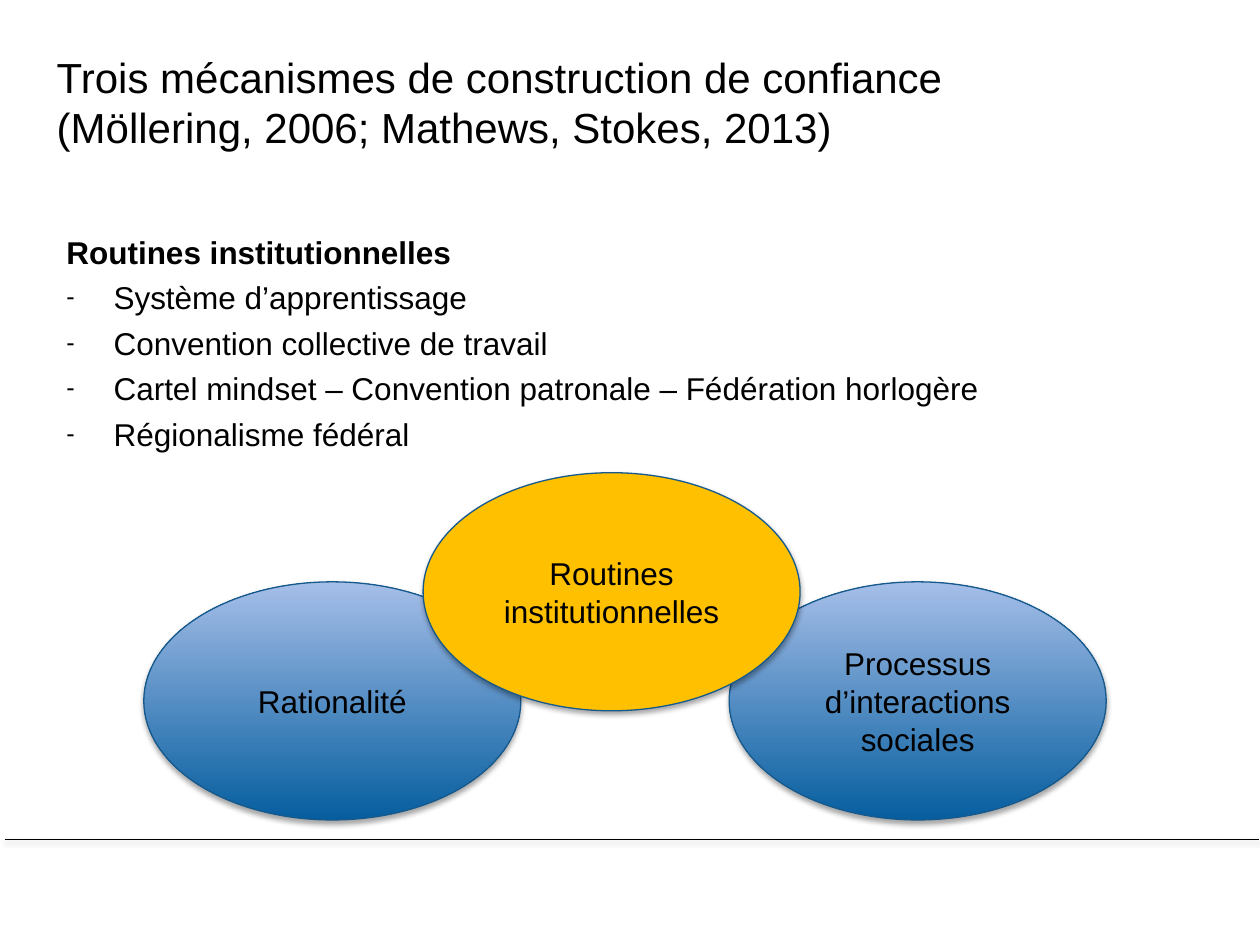
from lxml import etree
from pptx import Presentation
from pptx.dml.color import RGBColor
from pptx.enum.shapes import MSO_CONNECTOR, MSO_SHAPE
from pptx.enum.text import MSO_ANCHOR, PP_ALIGN
from pptx.oxml.ns import qn
from pptx.util import Cm, Pt

OVAL = MSO_SHAPE.OVAL
STRAIGHT = MSO_CONNECTOR.STRAIGHT
TOP, MIDDLE = MSO_ANCHOR.TOP, MSO_ANCHOR.MIDDLE
LEFT, CENTER = PP_ALIGN.LEFT, PP_ALIGN.CENTER

FONT = "Arial"
BLACK = RGBColor(0x00, 0x00, 0x00)
GREY = RGBColor(0x80, 0x80, 0x80)
OUTLINE = RGBColor(0x15, 0x59, 0x8D)
DARK_BLUE = RGBColor(0x06, 0x5E, 0x9F)
LIGHT_BLUE = RGBColor(0xA5, 0xBE, 0xE8)
GOLD = RGBColor(0xFF, 0xC0, 0x00)

# Content
TITLE = ["Trois mécanismes de construction de confiance",
         "(Möllering, 2006; Mathews, Stokes, 2013)"]
HEADING = "Routines institutionnelles"
BULLETS = ["Système d’apprentissage",
           "Convention collective de travail",
           "Cartel mindset – Convention patronale – Fédération horlogère",
           "Régionalisme fédéral"]
# Text, left and top in cm, highlighted; from back to front
MECHANISMS = [("Processus d’interactions sociales", 14.7, 11.73, False),
              ("Rationalité", 2.9, 11.73, False),
              ("Routines institutionnelles", 8.53, 9.53, True)]
OVAL_W, OVAL_H = 7.6, 4.8


def add_text(p, text, size, align=LEFT, bold=False):
    p.alignment = align
    r = p.add_run()
    r.text = text
    r.font.name, r.font.size, r.font.bold = FONT, Pt(size), bold
    r.font.color.rgb = BLACK


def add_shadow(sp, color, opacity, distance):
    spPr = sp._element.spPr
    for old in spPr.findall(qn("a:effectLst")):
        spPr.remove(old)
    effects = etree.SubElement(spPr, qn("a:effectLst"))
    shadow = etree.SubElement(effects, qn("a:outerShdw"), blurRad=str(Pt(3.1)),
                              dist=str(Pt(distance)), dir="5400000", rotWithShape="0")
    clr = etree.SubElement(shadow, qn("a:srgbClr"), val=str(color))
    etree.SubElement(clr, qn("a:alpha"), val=str(opacity * 1000))


def add_dash(p):
    pPr = p._p.get_or_add_pPr()
    pPr.set("marL", str(Cm(0.95)))
    pPr.set("indent", str(-Cm(0.95)))
    etree.SubElement(pPr, qn("a:buSzPct"), val="80000")
    etree.SubElement(pPr, qn("a:buFont"), typeface=FONT)
    etree.SubElement(pPr, qn("a:buChar"), char="-")


prs = Presentation()
prs.slide_width, prs.slide_height = Cm(25.4), Cm(19.05)
s = prs.slides.add_slide(prs.slide_layouts[5])

# Title
title = s.shapes.title
title.left, title.top, title.width, title.height = Cm(0.89), Cm(0.91), Cm(22.86), Cm(2.3)
tf = title.text_frame
tf.vertical_anchor = TOP
for i, line in enumerate(TITLE):
    p = tf.add_paragraph() if i else tf.paragraphs[0]
    p.space_before = Pt(0)
    add_text(p, line, 24)

# Footer rule
rule = s.shapes.add_connector(STRAIGHT, Cm(0.1), Cm(16.92), Cm(25.37), Cm(16.92))
rule.line.color.rgb = BLACK
rule.line.width = Pt(0.25)
add_shadow(rule, GREY, 38, 1.6)

# Heading and bullets
body = s.shapes.add_textbox(Cm(1.09), Cm(4.57), Cm(23.19), Cm(4.7))
tf = body.text_frame
tf.word_wrap = True
add_text(tf.paragraphs[0], HEADING, 18, bold=True)
for bullet in BULLETS:
    p = tf.add_paragraph()
    p.space_before = Pt(4.4)
    add_dash(p)
    add_text(p, bullet, 18)

# Three overlapping mechanisms
for text, x, y, highlighted in MECHANISMS:
    sp = s.shapes.add_shape(OVAL, Cm(x), Cm(y), Cm(OVAL_W), Cm(OVAL_H))
    if highlighted:
        sp.fill.solid()
        sp.fill.fore_color.rgb = GOLD
    else:
        sp.fill.gradient()
        sp.fill.gradient_angle = 90
        for stop, color in zip(sp.fill.gradient_stops, (DARK_BLUE, LIGHT_BLUE)):
            stop.color.rgb = color
    sp.line.color.rgb = OUTLINE
    sp.line.width = Pt(0.75)
    add_shadow(sp, BLACK, 35, 1.8)
    tf = sp.text_frame
    tf.word_wrap = True
    tf.vertical_anchor = MIDDLE
    add_text(tf.paragraphs[0], text, 18, CENTER)

prs.save("out.pptx")
